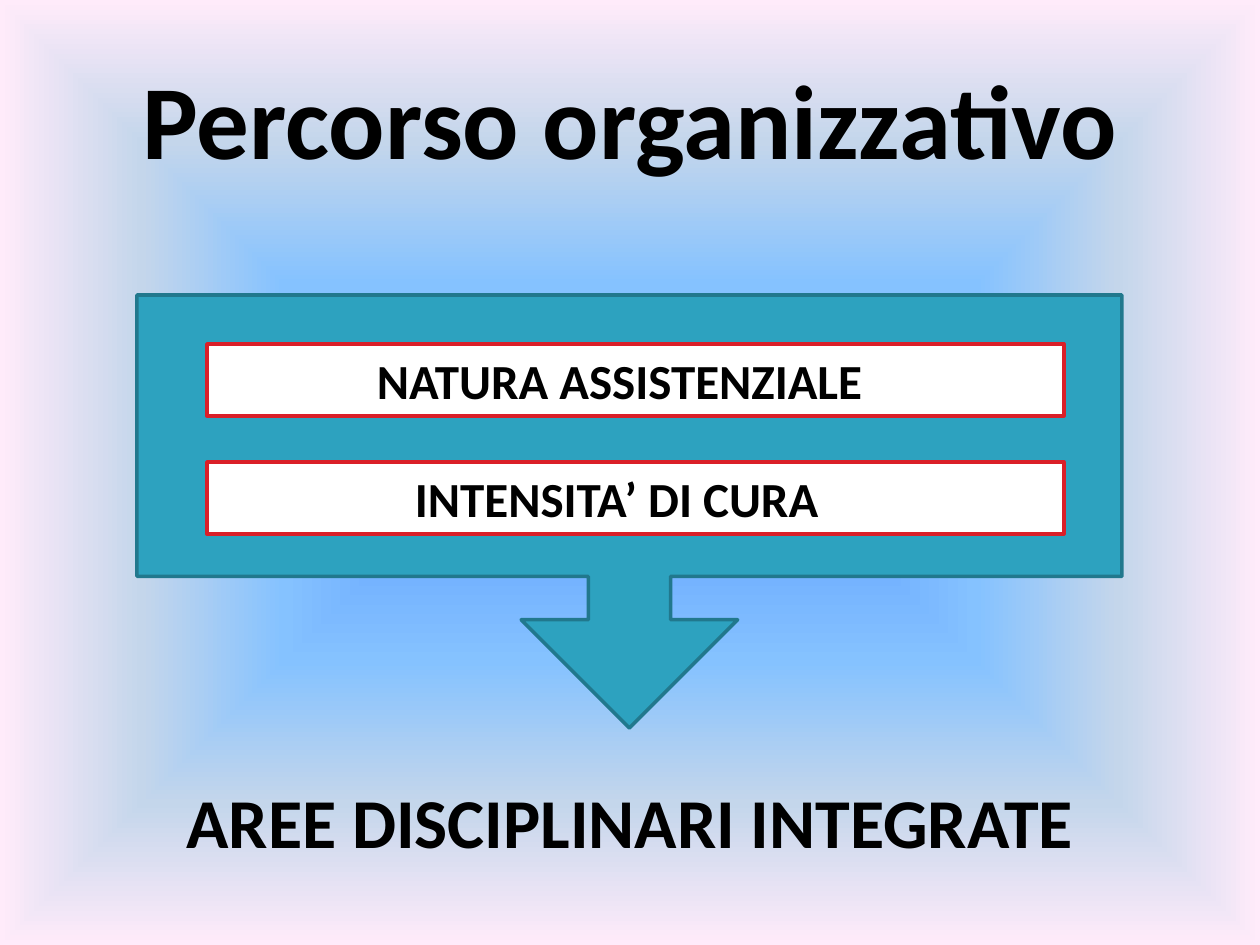
import pptx
import pptx.util
from lxml import etree
from pptx.dml.color import RGBColor
from pptx.enum.shapes import MSO_SHAPE
from pptx.enum.text import MSO_ANCHOR, PP_ALIGN
from pptx.oxml.ns import qn

PX = 914400 // 126
BLACK = RGBColor(0x00, 0x00, 0x00)
WHITE = RGBColor(0xFF, 0xFF, 0xFF)
RED = RGBColor(0xDA, 0x1F, 0x28)
TEAL = RGBColor(0x2D, 0xA2, 0xBF)
DARK_TEAL = RGBColor(0x21, 0x78, 0x8D)
GLOW = [
    (0, RGBColor(0x5E, 0x9E, 0xFF)),
    (40, RGBColor(0x85, 0xC2, 0xFF)),
    (70, RGBColor(0xC4, 0xD6, 0xEB)),
    (100, RGBColor(0xFF, 0xEB, 0xFA)),
]


def px(n):
    return pptx.util.Emu(n * PX)


def set_background(s):
    s.background.fill.gradient()
    grad = next(s.background._cSld.iter(qn("a:gradFill")))
    for child in list(grad):
        grad.remove(child)
    stops = etree.SubElement(grad, qn("a:gsLst"))
    for pos, color in GLOW:
        gs = etree.SubElement(stops, qn("a:gs"), pos=str(pos * 1000))
        etree.SubElement(gs, qn("a:srgbClr"), val=str(color))
    shade = etree.SubElement(grad, qn("a:path"), path="shape")
    etree.SubElement(shade, qn("a:fillToRect"), l="50000", t="50000", r="50000", b="50000")


def write(sp, text, size, align):
    tf = sp.text_frame
    tf.word_wrap = True
    tf.vertical_anchor = MSO_ANCHOR.MIDDLE
    p = tf.paragraphs[0]
    p.text = text
    p.alignment = align
    font = p.runs[0].font
    font.name = "Calibri"
    font.size = pptx.util.Pt(size)
    font.bold = True
    font.color.rgb = BLACK


def add_heading(s, text, top, height, size):
    sp = s.shapes.add_textbox(px(63), px(top), px(1134), px(height))
    write(sp, text, size, PP_ALIGN.CENTER)


def add_shape(s, kind, left, top, width, height, fill, line):
    sp = s.shapes.add_shape(kind, px(left), px(top), px(width), px(height))
    sp.shadow.inherit = False
    sp.fill.solid()
    sp.fill.fore_color.rgb = fill
    sp.line.color.rgb = line
    sp.line.width = pptx.util.Pt(2)
    return sp


def add_callout(s):
    sp = add_shape(s, MSO_SHAPE.DOWN_ARROW_CALLOUT, 137, 295, 985, 433, TEAL, DARK_TEAL)
    for i, value in enumerate((0.19, 0.25, 0.25, 0.65)):
        sp.adjustments[i] = value


def add_label(s, text, top, inset):
    sp = add_shape(s, MSO_SHAPE.RECTANGLE, 207, top, 857, 72, WHITE, RED)
    write(sp, text, 28, PP_ALIGN.LEFT)
    sp.text_frame.margin_left = px(inset)


def main():
    prs = pptx.Presentation()
    prs.slide_width, prs.slide_height = px(1260), px(945)
    s = prs.slides.add_slide(prs.slide_layouts[6])
    set_background(s)
    add_heading(s, "Percorso organizzativo", 38, 158, 60)
    add_heading(s, "AREE DISCIPLINARI INTEGRATE", 776, 90, 40)
    add_callout(s)
    add_label(s, "NATURA ASSISTENZIALE", 344, 170)
    add_label(s, "INTENSITA’ DI CURA", 462, 208)
    prs.save("out.pptx")


if __name__ == "__main__":
    main()
